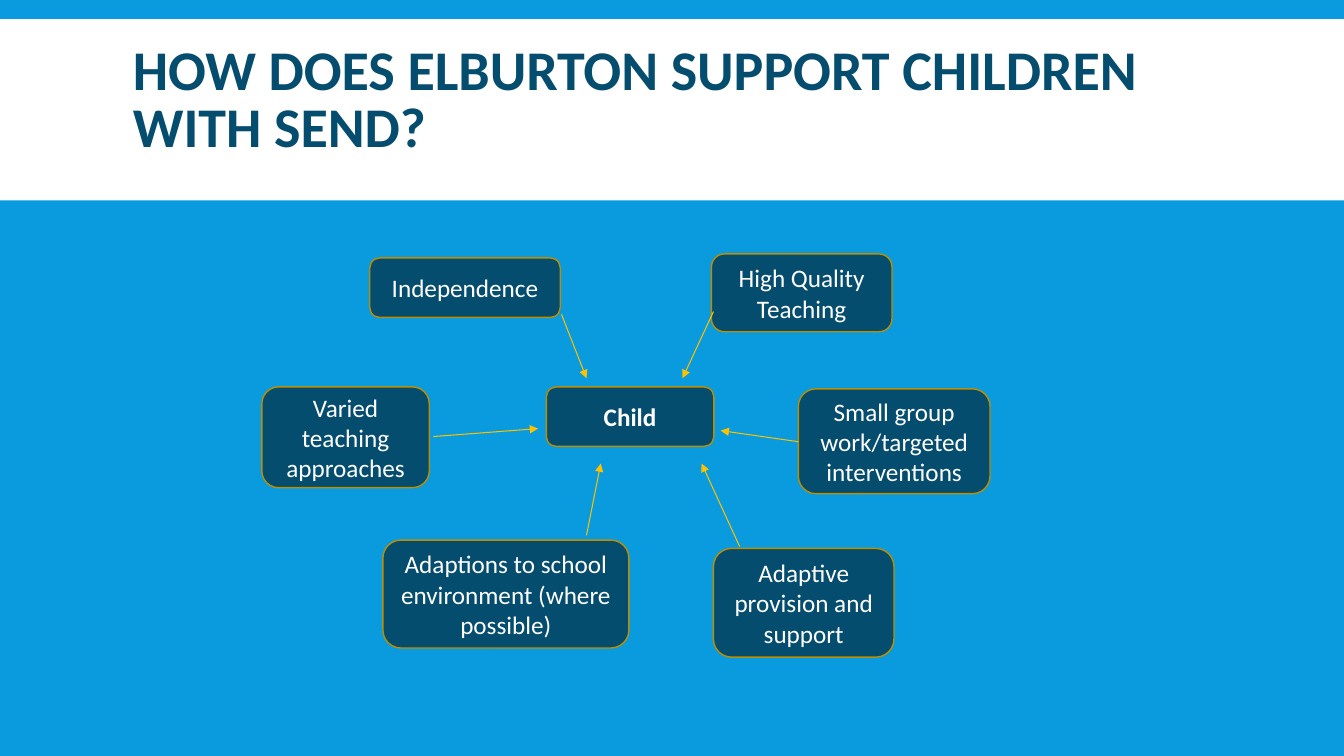
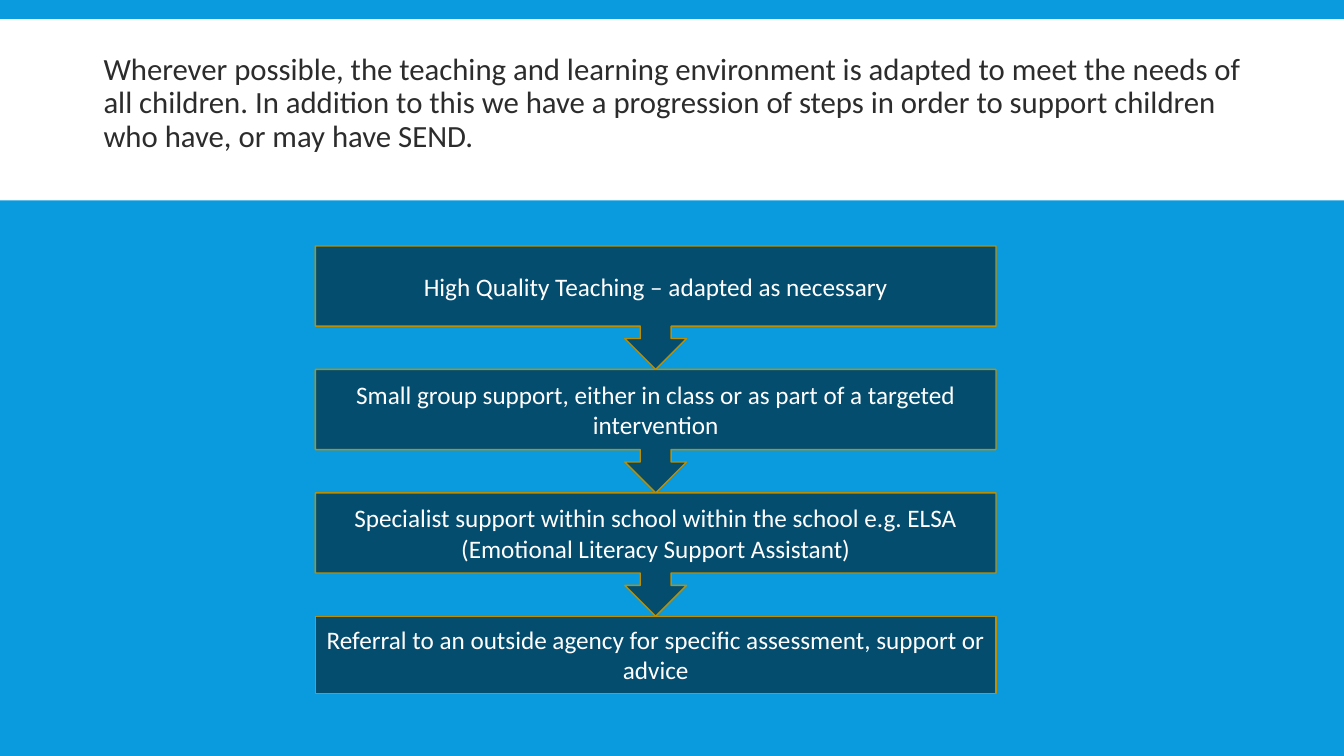
from dataclasses import dataclass

from lxml.etree import SubElement
from pptx import Presentation
from pptx.dml.color import RGBColor
from pptx.enum.shapes import MSO_CONNECTOR as Connector, MSO_SHAPE as Preset
from pptx.enum.text import MSO_ANCHOR as Anchor, PP_ALIGN as Align
from pptx.oxml.ns import qn
from pptx.util import Cm, Pt

SLIDE_WIDTH, SLIDE_HEIGHT = 33.87, 19.05
FONT = "Calibri"
COLOURS = {
    "background": "099BDD",
    "white": "FFFFFF",
    "navy": "044D6E",
    "outline": "BD8E00",
    "arrow": "FFC000",
    "body": "2C2C2C",
}


@dataclass(frozen=True)
class Box:
    """A rectangle, in centimetres."""
    left: float
    top: float
    width: float
    height: float

    def lengths(self):
        return Cm(self.left), Cm(self.top), Cm(self.width), Cm(self.height)


@dataclass(frozen=True)
class Factor:
    """A kind of support, with the arrow that leads from it to the child."""
    text: str
    box: Box
    start: tuple[float, float]
    end: tuple[float, float]


HEADER_BAND = Box(0, 0.48, SLIDE_WIDTH, 4.57)
TITLE_BOX = Box(3.1, 0.48, 27.18, 4.19)
INTRO_BOX = Box(2.36, 1.24, 29.21, 12.1)
CHILD_BOX = Box(13.77, 9.75, 4.22, 1.5)

FACTORS = [
    Factor("Adaptions to school environment (where possible)",
           Box(9.65, 13.61, 6.2, 2.72), (14.78, 13.49), (15.14, 11.68)),
    Factor("High Quality Teaching",
           Box(17.93, 6.4, 4.55, 1.96), (17.98, 7.85), (17.2, 9.53)),
    Factor("Adaptive provision and support",
           Box(17.98, 13.82, 4.55, 2.74), (18.64, 13.77), (17.68, 11.68)),
    Factor("Varied teaching approaches",
           Box(6.6, 9.75, 4.22, 2.54), (10.92, 11), (13.56, 10.8)),
    Factor("Small group work/targeted interventions",
           Box(20.12, 9.8, 4.83, 2.64), (20.12, 11.13), (18.16, 10.85)),
    Factor("Independence",
           Box(9.32, 6.5, 4.8, 1.5), (14.15, 7.92), (14.78, 9.53)),
]

STEPS = [
    "High Quality Teaching – adapted as necessary",
    "Small group support, either in class or as part of a targeted intervention",
    "Specialist support within school within the school e.g. ELSA "
    "(Emotional Literacy Support Assistant)",
    "Referral to an outside agency for specific assessment, support or advice",
]
STEP_LEFT, STEP_TOP, STEP_WIDTH = 7.95, 6.2, 17.15
STEP_PITCH, LAST_STEP_HEIGHT = 3.11, 1.94


def colour(name: str) -> RGBColor:
    return RGBColor.from_string(COLOURS[name])


def write_text(shape, text: str, *, size: float = 18, color: str = "white",
               bold: bool = False, align=Align.CENTER, anchor=Anchor.MIDDLE,
               line_spacing: float = 1.0) -> None:
    frame = shape.text_frame
    frame.word_wrap = True
    frame.vertical_anchor = anchor
    paragraph = frame.paragraphs[0]
    paragraph.alignment = align
    paragraph.line_spacing = line_spacing
    run = paragraph.add_run()
    run.text = text
    run.font.name = FONT
    run.font.size = Pt(size)
    run.font.bold = bold
    run.font.color.rgb = colour(color)


def add_filled_shape(slide, preset, box: Box, fill: str, outline: str | None = None):
    shape = slide.shapes.add_shape(preset, *box.lengths())
    shape.shadow.inherit = False
    shape.fill.solid()
    shape.fill.fore_color.rgb = colour(fill)
    if outline:
        shape.line.color.rgb = colour(outline)
        shape.line.width = Pt(1)
    else:
        shape.line.fill.background()
    return shape


def add_label(slide, preset, box: Box, text: str, bold: bool = False) -> None:
    """Draw a navy shape with its caption."""
    write_text(add_filled_shape(slide, preset, box, "navy", "outline"), text, bold=bold)


def add_arrow(slide, start: tuple[float, float], end: tuple[float, float]) -> None:
    points = [Cm(value) for value in (*start, *end)]
    connector = slide.shapes.add_connector(Connector.STRAIGHT, *points)
    connector.line.color.rgb = colour("arrow")
    connector.line.width = Pt(0.75)
    SubElement(connector.line._get_or_add_ln(), qn("a:tailEnd"), type="triangle")
    SubElement(connector._element.spPr, qn("a:effectLst"))


def add_banded_slide(presentation):
    """Add a blue slide with the white header band."""
    slide = presentation.slides.add_slide(presentation.slide_layouts[6])
    slide.background.fill.solid()
    slide.background.fill.fore_color.rgb = colour("background")
    add_filled_shape(slide, Preset.RECTANGLE, HEADER_BAND, "white")
    return slide


def build_support_slide(presentation) -> None:
    slide = add_banded_slide(presentation)
    write_text(slide.shapes.add_textbox(*TITLE_BOX.lengths()),
               "HOW DOES ELBURTON SUPPORT CHILDREN WITH SEND?",
               size=40, color="navy", bold=True, align=Align.LEFT, line_spacing=0.85)
    add_label(slide, Preset.FLOWCHART_ALTERNATE_PROCESS, CHILD_BOX, "Child", bold=True)
    for factor in FACTORS:
        add_label(slide, Preset.FLOWCHART_ALTERNATE_PROCESS, factor.box, factor.text)
    for factor in FACTORS:
        add_arrow(slide, factor.start, factor.end)


def build_steps_slide(presentation) -> None:
    slide = add_banded_slide(presentation)
    write_text(slide.shapes.add_textbox(*INTRO_BOX.lengths()),
               "Wherever possible, the teaching and learning environment is adapted to "
               "meet the needs of all children. In addition to this we have a progression "
               "of steps in order to support children who have, or may have SEND.",
               size=22, color="body", align=Align.LEFT, anchor=Anchor.TOP,
               line_spacing=0.9)
    for index, text in enumerate(STEPS):
        is_last = index == len(STEPS) - 1
        preset = Preset.RECTANGLE if is_last else Preset.DOWN_ARROW_CALLOUT
        height = LAST_STEP_HEIGHT if is_last else STEP_PITCH
        box = Box(STEP_LEFT, STEP_TOP + index * STEP_PITCH, STEP_WIDTH, height)
        add_label(slide, preset, box, text)


def main() -> None:
    presentation = Presentation()
    presentation.slide_width = Cm(SLIDE_WIDTH)
    presentation.slide_height = Cm(SLIDE_HEIGHT)
    build_support_slide(presentation)
    build_steps_slide(presentation)
    presentation.save("out.pptx")


if __name__ == "__main__":
    main()
